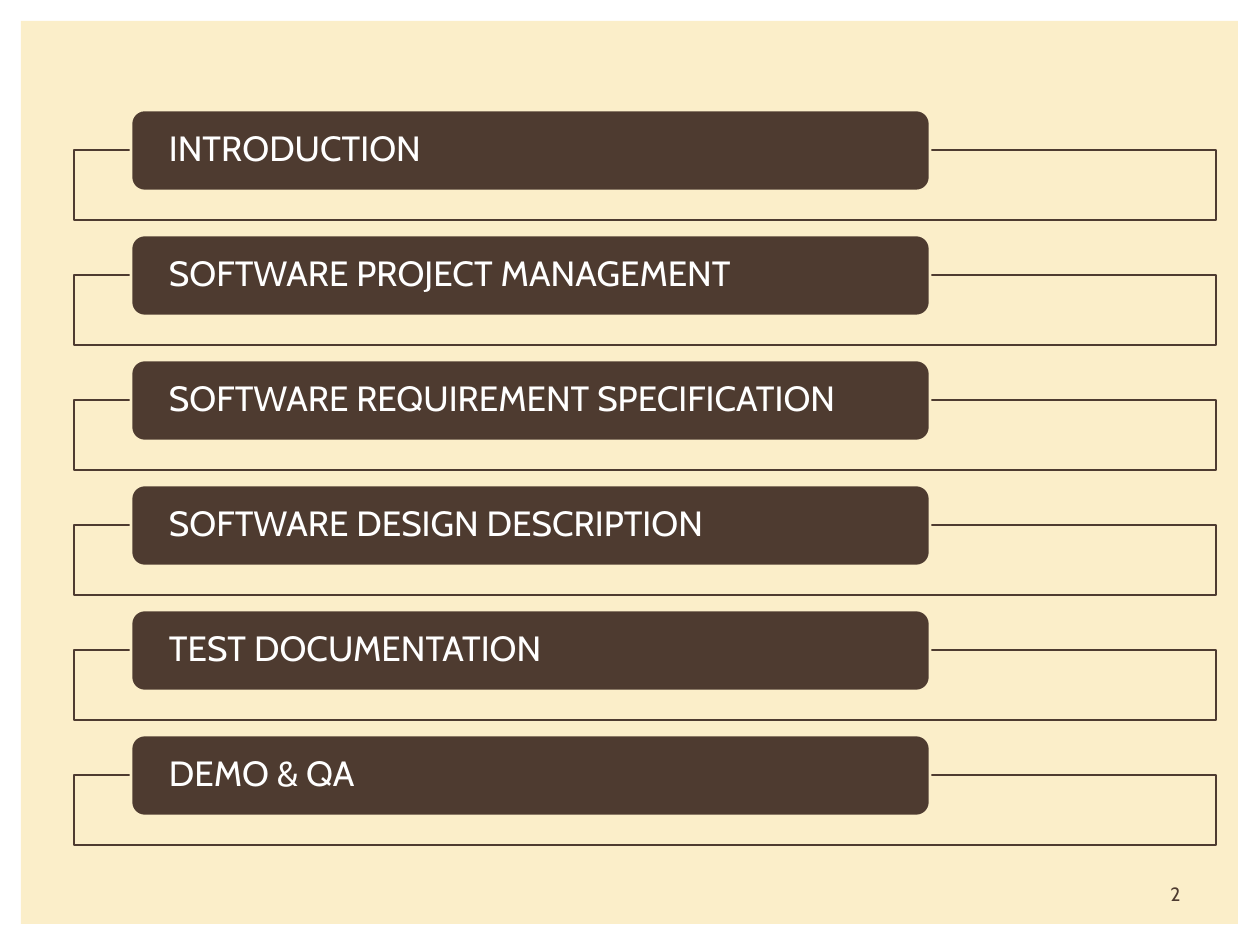
from lxml.etree import SubElement
from pptx import Presentation
from pptx.dml.color import RGBColor
from pptx.enum.shapes import MSO_SHAPE as Shape
from pptx.enum.text import MSO_ANCHOR as Anchor, PP_ALIGN as Align
from pptx.oxml.ns import qn
from pptx.util import Pt

# Content
TOPICS = [
    "INTRODUCTION",
    "SOFTWARE PROJECT MANAGEMENT",
    "SOFTWARE REQUIREMENT SPECIFICATION",
    "SOFTWARE DESIGN DESCRIPTION",
    "TEST DOCUMENTATION",
    "DEMO & QA",
]
PAGE = "2"

# Look, with lengths in px
CREAM, BROWN, WHITE = "FBEEC9", "4E3B30", "FFFFFF"
FONT = "Cabin"
SCALE = 914400 / 126
STEP = 125
PANEL = (21, 21, 1217, 903)
FRAME = (74, 150, 1142, 70)
BAR = (131, 110, 799, 81)
NUMBER = (1135, 876, 81, 38)
INSET = 34


def px(n):
    return round(n * SCALE)


def color(code):
    return RGBColor.from_string(code)


def add_box(kind, area, fill, line=None):
    box = slide.shapes.add_shape(kind, *map(px, area))
    box.shadow.inherit = False
    box.fill.solid()
    box.fill.fore_color.rgb = color(fill)
    if line:
        box.line.color.rgb = color(line)
        box.line.width = Pt(1.5)
    else:
        box.line.fill.background()
    return box


def set_text(shape, text, size, ink, align, inset):
    frame = shape.text_frame
    form = dict(word_wrap=True, vertical_anchor=Anchor.MIDDLE,
                margin_left=px(inset), margin_right=px(inset),
                margin_top=0, margin_bottom=0)
    for key, value in form.items():
        setattr(frame, key, value)
    para = frame.paragraphs[0]
    para.alignment = align
    para.line_spacing = 0.9
    run = para.add_run()
    run.text = text
    run.font.name = FONT
    run.font.size = Pt(size)
    run.font.color.rgb = color(ink)


deck = Presentation()
deck.slide_width, deck.slide_height = px(1260), px(945)
slide = deck.slides.add_slide(deck.slide_layouts[6])

# Background panel
add_box(Shape.RECTANGLE, PANEL, CREAM)

# Topic rows: an outlined frame with a title bar over its top edge
for i, topic in enumerate(TOPICS):
    (fx, fy, *fsize), (bx, by, *bsize) = FRAME, BAR
    frame = add_box(Shape.RECTANGLE, (fx, fy + i * STEP, *fsize), CREAM, BROWN)
    tint = frame.fill._xPr.find(qn("a:solidFill"))[0]
    SubElement(tint, qn("a:alpha"), val="90000")
    bar = add_box(Shape.ROUNDED_RECTANGLE, (bx, by + i * STEP, *bsize),
                  BROWN, CREAM)
    set_text(bar, topic, 20, WHITE, Align.LEFT, INSET)

# Page number
number = slide.shapes.add_textbox(*map(px, NUMBER))
set_text(number, PAGE, 11, BROWN, Align.CENTER, 12)

deck.save("out.pptx")
